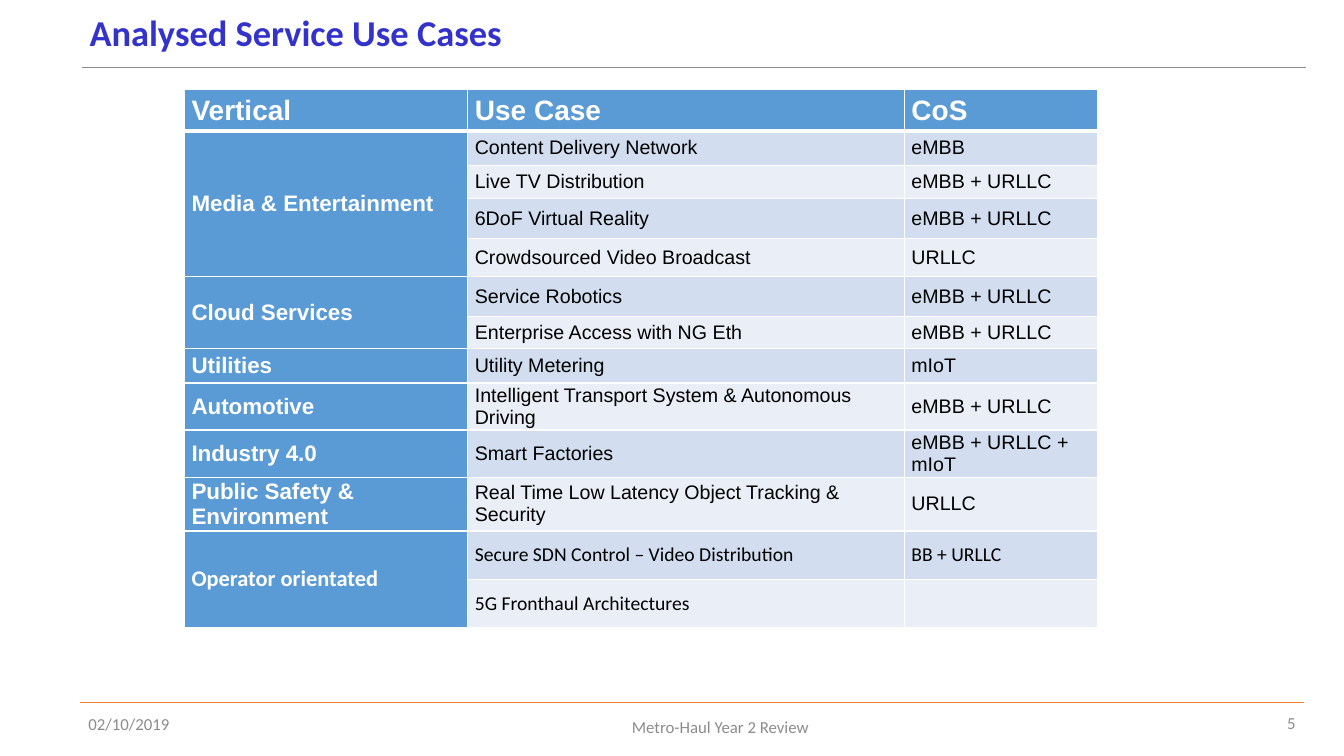
"""Build the slide listing the analysed service use cases."""
from lxml import etree
from pptx import Presentation, util as u
from pptx.dml.color import RGBColor
from pptx.enum import shapes, text
from pptx.oxml import ns

COLOURS = {"title": "3333CC", "grey": "8C8C8C", "orange": "ED7D31", "head": "5B9BD5",
           "odd": "D2DEEF", "even": "EAEFF7", "white": "FFFFFF", "black": "000000"}
HEADINGS = ["Vertical", "Use Case", "CoS"]
VERTICALS = [
    ("Media & Entertainment", [("Content Delivery Network", "eMBB"),
                               ("Live TV Distribution", "eMBB + URLLC"),
                               ("6DoF Virtual Reality", "eMBB + URLLC"),
                               ("Crowdsourced Video Broadcast", "URLLC")]),
    ("Cloud Services", [("Service Robotics", "eMBB + URLLC"),
                        ("Enterprise Access with NG Eth", "eMBB + URLLC")]),
    ("Utilities", [("Utility Metering", "mIoT")]),
    ("Automotive", [("Intelligent Transport System & Autonomous Driving", "eMBB + URLLC")]),
    ("Industry 4.0", [("Smart Factories", "eMBB + URLLC + mIoT")]),
    ("Public Safety & Environment", [("Real Time Low Latency Object Tracking & Security", "URLLC")]),
    ("Operator orientated", [("Secure SDN Control – Video Distribution", "BB + URLLC"),
                             ("5G Fronthaul Architectures", "")]),
]
COLUMN_WIDTHS = [2.81, 4.33, 1.92]
ROW_HEIGHTS = [0.41, 0.34, 0.33, 0.4, 0.37, 0.4, 0.32, 0.34, 0.34, 0.36, 0.44, 0.48, 0.48]


def write(frame, words, size, colour, font="Calibri", bold=False, align=text.PP_ALIGN.LEFT, spacing=None):
    frame.word_wrap = True
    frame.vertical_anchor = text.MSO_ANCHOR.MIDDLE
    paragraph = frame.paragraphs[0]
    paragraph.alignment = align
    paragraph.line_spacing = spacing
    if words:
        run = paragraph.add_run()
        run.text = words
        run.font.size, run.font.name, run.font.bold = u.Pt(size), font, bold
        run.font.color.rgb = RGBColor.from_string(COLOURS[colour])


def style_cell(cell, fill, bottom=1, top=1):
    cell.margin_left = cell.margin_right = u.Inches(0.07)
    cell.margin_top = cell.margin_bottom = 0
    cell.vertical_anchor = text.MSO_ANCHOR.MIDDLE
    properties = cell._tc.get_or_add_tcPr()
    for side, width in (("L", 1), ("R", 1), ("T", top), ("B", bottom)):
        border = etree.SubElement(properties, ns.qn(f"a:ln{side}"), w=str(u.Pt(width)))
        solid = etree.SubElement(border, ns.qn("a:solidFill"))
        etree.SubElement(solid, ns.qn("a:srgbClr"), val=COLOURS["white"])
    cell.fill.solid()
    cell.fill.fore_color.rgb = RGBColor.from_string(COLOURS[fill])


deck = Presentation()
deck.slide_width, deck.slide_height = u.Inches(13.33), u.Inches(7.5)
slide = deck.slides.add_slide(deck.slide_layouts[6])

for left, top, colour in ((0.81, 0.67, "grey"), (0.79, 6.97, "orange")):
    rule = slide.shapes.add_connector(shapes.MSO_CONNECTOR.STRAIGHT, u.Inches(left), u.Inches(top),
                                      u.Inches(left + 12.14), u.Inches(top))
    rule.line.width = u.Pt(0.5)
    rule.line.color.rgb = RGBColor.from_string(COLOURS[colour])
    etree.SubElement(rule._element.spPr, ns.qn("a:effectLst"))

CENTRE, RIGHT = text.PP_ALIGN.CENTER, text.PP_ALIGN.RIGHT
for words, place, look in (
    ("Analysed Service Use Cases", (0.79, 0, 10.97, 0.68),
     dict(size=26, colour="title", bold=True, spacing=0.9)),
    ("5", (12.49, 6.97, 0.46, 0.4), dict(size=12, colour="grey", align=RIGHT)),
    ("02/10/2019", (0.56, 7.01, 1.44, 0.34), dict(size=12, colour="grey", align=CENTRE)),
    ("Metro-Haul Year 2 Review", (1.91, 7.01, 10.47, 0.4), dict(size=12, colour="grey", align=CENTRE)),
):
    write(slide.shapes.add_textbox(*map(u.Inches, place)).text_frame, words, **look)

use_cases = slide.shapes.add_table(len(ROW_HEIGHTS), len(COLUMN_WIDTHS), u.Inches(1.83), u.Inches(0.89),
                                   u.Inches(9.06), u.Inches(5)).table
for column, width in zip(use_cases.columns, COLUMN_WIDTHS):
    column.width = u.Inches(width)
for row, height in zip(use_cases.rows, ROW_HEIGHTS):
    row.height = u.Inches(height)

for column, heading in enumerate(HEADINGS):
    cell = use_cases.cell(0, column)
    write(cell.text_frame, heading, 20, "white", font="Arial", bold=True)
    style_cell(cell, "head", bottom=3)

row = 1
for vertical, cases in VERTICALS:
    font = "Calibri" if vertical == "Operator orientated" else "Arial"
    first = use_cases.cell(row, 0)
    write(first.text_frame, vertical, 16, "white", font=font, bold=True)
    if len(cases) > 1:
        first.merge(use_cases.cell(row + len(cases) - 1, 0))
    for case in cases:
        top = 3 if row == 1 else 1
        style_cell(use_cases.cell(row, 0), "head", top=top)
        for column, words in enumerate(case, 1):
            cell = use_cases.cell(row, column)
            write(cell.text_frame, words, 14, "black", font=font)
            style_cell(cell, "odd" if row % 2 else "even", top=top)
        row += 1

deck.save("out.pptx")
